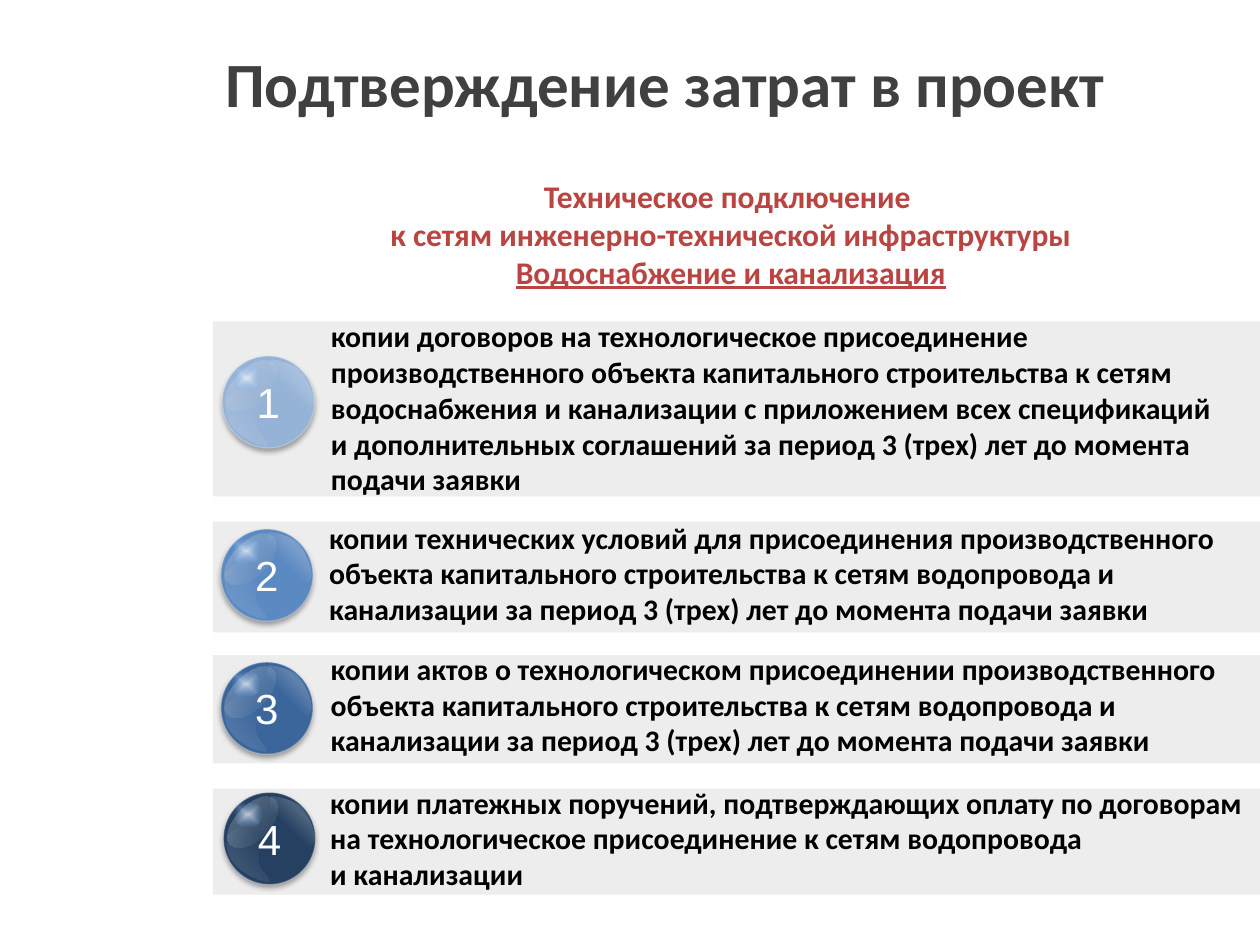
from dataclasses import dataclass
from typing import Any, NamedTuple

from lxml import etree
from pptx import Presentation
from pptx.dml.color import RGBColor
from pptx.enum.shapes import MSO_SHAPE
from pptx.enum.text import MSO_ANCHOR, MSO_AUTO_SIZE, PP_ALIGN
from pptx.oxml.ns import qn
from pptx.util import Inches, Pt

RECTANGLE, OVAL = MSO_SHAPE.RECTANGLE, MSO_SHAPE.OVAL
LEFT, CENTER = PP_ALIGN.LEFT, PP_ALIGN.CENTER
TOP, MIDDLE = MSO_ANCHOR.TOP, MSO_ANCHOR.MIDDLE
GROW = MSO_AUTO_SIZE.SHAPE_TO_FIT_TEXT

WHITE = RGBColor(0xFF, 0xFF, 0xFF)
BLACK = RGBColor(0x00, 0x00, 0x00)
TITLE_GREY = RGBColor(0x40, 0x40, 0x40)
HEADING_RED = RGBColor(0xB9, 0x44, 0x41)
BAR_GREY = RGBColor(0xA6, 0xA6, 0xA6)
GLINT_GREY = RGBColor(0xB6, 0xB6, 0xB6)
GLINT_BLUE = RGBColor(0x67, 0xAB, 0xF5)
BALL_BLUES = (
    RGBColor(0x95, 0xB3, 0xD7),
    RGBColor(0x5B, 0x89, 0xC1),
    RGBColor(0x3B, 0x66, 0x9B),
    RGBColor(0x25, 0x40, 0x61),
)

SLIDE_WIDTH, SLIDE_HEIGHT = Inches(10), Inches(7.5)
COLUMNS, ROWS = 1000, 750
BAR_LEFT, BAR_WIDTH = 169, 831
BALL_SIZE = 73

TITLE_FORMAT = {"size": Pt(36), "name": "Calibri", "bold": True}
HEADING_FORMAT = {"size": Pt(18), "name": "Calibri", "bold": True}
ITEM_FORMAT = {"size": Pt(17), "name": "Calibri", "bold": True}
NUMBER_FORMAT = {"size": Pt(24), "name": "Arial"}


class Box(NamedTuple):
    left: float
    top: float
    width: float
    height: float

    def emu(self) -> tuple[int, int, int, int]:
        return col(self.left), row(self.top), col(self.width), row(self.height)


class Stop(NamedTuple):
    position: int
    color: RGBColor
    opacity: int


class Gradient(NamedTuple):
    stops: tuple[Stop, ...]
    angle: int = 90
    shape: str = ""
    focus: tuple[int, int, int, int] = (50, 50, 50, 50)


@dataclass(frozen=True)
class Glint:
    box: Box
    rotation: int
    gradient: Gradient


@dataclass(frozen=True)
class Reflection:
    start: tuple[int, int]
    curves: tuple[tuple[int, ...], ...]
    gradient: Gradient


@dataclass(frozen=True)
class Requirement:
    bar_top: int
    bar_height: int
    ball: tuple[float, float]
    text_box: Box
    text: str


GLINTS = (
    Glint(Box(-2, 10, 50, 27), 315, Gradient((Stop(0, WHITE, 33), Stop(100, GLINT_GREY, 0)))),
    Glint(Box(8, 7, 23, 21), 0,
          Gradient((Stop(0, WHITE, 65), Stop(100, GLINT_BLUE, 0)), shape="shape")),
    Glint(Box(28, 39, 50, 27), 135, Gradient((Stop(0, WHITE, 33), Stop(20, GLINT_GREY, 0)))),
)
REFLECTIONS = (
    Reflection(
        (39, 3),
        ((35, 3, 38, 9, 36, 12), (35, 14, 27, 15, 31, 20), (33, 26, 56, 34, 58, 41),
         (60, 49, 59, 49, 61, 48), (63, 47, 72, 42, 72, 36), (72, 30, 67, 17, 61, 11),
         (56, 6, 43, 3, 39, 3)),
        Gradient((Stop(50, WHITE, 0), Stop(74, WHITE, 19), Stop(100, WHITE, 0)),
                 shape="circle", focus=(0, 100, 100, 0))),
    Reflection(
        (24, 20),
        ((22, 20, 15, 24, 12, 27), (8, 30, 4, 32, 3, 35), (2, 39, 3, 45, 4, 49),
         (6, 53, 8, 57, 12, 60), (15, 63, 20, 66, 24, 68), (29, 70, 36, 72, 36, 70),
         (37, 68, 29, 61, 28, 56), (27, 51, 29, 47, 28, 41), (28, 36, 24, 28, 24, 25),
         (23, 21, 26, 20, 24, 20)),
        Gradient((Stop(0, WHITE, 0), Stop(28, WHITE, 0), Stop(74, WHITE, 11)), angle=142)),
)
REQUIREMENTS = (
    Requirement(255, 139, (176.4, 282.6), Box(252.8, 247.6, 749, 153),
                "копии договоров на технологическое присоединение производственного объекта "
                "капитального строительства к сетям водоснабжения и канализации с приложением "
                "всех спецификаций \nи дополнительных соглашений за период 3 (трех) лет "
                "до момента подачи заявки"),
    Requirement(414, 88, (175.4, 420), Box(251.4, 407.4, 749, 96),
                "копии технических условий для присоединения производственного объекта "
                "капитального строительства к сетям водопровода и канализации "
                "за период 3 (трех) лет до момента подачи заявки"),
    Requirement(520, 86, (175.4, 525.6), Box(252.6, 511.6, 749, 96),
                "копии актов о технологическом присоединении производственного объекта "
                "капитального строительства к сетям водопровода и канализации "
                "за период 3 (трех) лет до момента подачи заявки"),
    Requirement(626, 84, (177.4, 629), Box(252.2, 617.6, 752, 96),
                "копии платежных поручений, подтверждающих оплату по договорам \n"
                "на технологическое присоединение к сетям водопровода \nи канализации"),
)


def col(columns: float) -> int:
    return round(SLIDE_WIDTH * columns / COLUMNS)


def row(rows: float) -> int:
    return round(SLIDE_HEIGHT * rows / ROWS)


def child(parent: Any, tag: str, **attributes: Any) -> Any:
    return etree.SubElement(parent, qn(tag), {k: str(v) for k, v in attributes.items()})


def set_opacity(fill: Any, percent: int) -> None:
    color = fill._xPr.find(".//" + qn("a:srgbClr"))
    child(color, "a:alpha", val=percent * 1000)


def write(paragraph: Any, text: str, style: dict, color: RGBColor, align: Any) -> None:
    paragraph.text = text
    paragraph.alignment = align
    for run in paragraph.runs:
        for attribute, value in style.items():
            setattr(run.font, attribute, value)
        run.font.color.rgb = color


def fill_gradient(shape: Any, gradient: Gradient) -> None:
    shape.shadow.inherit = False
    shape.line.fill.background()
    shape.fill.background()
    properties = shape._element.spPr
    empty = properties.find(qn("a:noFill"))
    fill = etree.Element(qn("a:gradFill"), rotWithShape="1")
    stops = child(fill, "a:gsLst")
    for stop in gradient.stops:
        mark = child(stops, "a:gs", pos=stop.position * 1000)
        color = child(mark, "a:srgbClr", val=stop.color)
        child(color, "a:alpha", val=stop.opacity * 1000)
    if gradient.shape:
        route = child(fill, "a:path", path=gradient.shape)
        child(route, "a:fillToRect",
              **{side: share * 1000 for side, share in zip("ltrb", gradient.focus)})
    else:
        child(fill, "a:lin", ang=gradient.angle * 60000, scaled=0)
    properties.replace(empty, fill)


def draw_reflection(parts: Any, left: float, top: float, reflection: Reflection) -> None:
    x, y = reflection.start
    builder = parts.build_freeform(col(left + x), row(top + y))
    builder.add_line_segments([(col(left + curve[i]), row(top + curve[i + 1]))
                               for curve in reflection.curves for i in (0, 2, 4)])
    outline = builder.convert_to_shape()
    segments = list(outline._element.spPr.iter(qn("a:lnTo")))
    for first in range(0, len(segments), 3):
        bend = etree.Element(qn("a:cubicBezTo"))
        segments[first].addprevious(bend)
        for segment in segments[first:first + 3]:
            bend.append(segment[0])
            segment.getparent().remove(segment)
    fill_gradient(outline, reflection.gradient)


def draw_bar(slide: Any, item: Requirement) -> None:
    box = Box(BAR_LEFT, item.bar_top, BAR_WIDTH, item.bar_height)
    bar = slide.shapes.add_shape(RECTANGLE, *box.emu())
    bar.shadow.inherit = False
    bar.line.fill.background()
    bar.fill.solid()
    bar.fill.fore_color.rgb = BAR_GREY
    set_opacity(bar.fill, 20)


def draw_ball(slide: Any, item: Requirement, number: int, color: RGBColor) -> None:
    left, top = item.ball
    parts = slide.shapes.add_group_shape().shapes
    ball = parts.add_shape(OVAL, *Box(left, top, BALL_SIZE, BALL_SIZE).emu())
    ball.fill.solid()
    ball.fill.fore_color.rgb = color
    ball.line.color.rgb = WHITE
    ball.line.width = Pt(0.75)
    set_opacity(ball.line.fill, 25)
    ball.shadow.inherit = False
    shadow = child(ball._element.spPr.find(qn("a:effectLst")), "a:outerShdw",
                   blurRad=Pt(3.1), dist=Pt(1.8), dir=90 * 60000, rotWithShape=0)
    child(child(shadow, "a:srgbClr", val=BLACK), "a:alpha", val=35000)
    ball.text_frame.vertical_anchor = MIDDLE
    write(ball.text_frame.paragraphs[0], str(number), NUMBER_FORMAT, WHITE, CENTER)
    for glint in GLINTS:
        x, y, width, height = glint.box
        shine = parts.add_shape(OVAL, *Box(left + x, top + y, width, height).emu())
        shine.rotation = glint.rotation
        fill_gradient(shine, glint.gradient)
    for reflection in REFLECTIONS:
        draw_reflection(parts, left, top, reflection)


def add_text(slide: Any, box: Box) -> Any:
    frame = slide.shapes.add_textbox(*box.emu()).text_frame
    for attribute, value in {"word_wrap": True, "auto_size": GROW, "vertical_anchor": TOP}.items():
        setattr(frame, attribute, value)
    return frame


def main() -> None:
    deck = Presentation()
    deck.slide_width, deck.slide_height = SLIDE_WIDTH, SLIDE_HEIGHT
    slide = deck.slides.add_slide(deck.slide_layouts[5])

    title = slide.shapes.title
    title.left, title.top, title.width, title.height = Box(168.6, 7, 823, 117).emu()
    title.text_frame.vertical_anchor = MIDDLE
    write(title.text_frame.paragraphs[0], "Подтверждение затрат в проект",
          TITLE_FORMAT, TITLE_GREY, LEFT)

    heading = add_text(slide, Box(172.6, 135.6, 815, 131))
    write(heading.paragraphs[0],
          "Техническое подключение \nк сетям инженерно-технической инфраструктуры",
          HEADING_FORMAT, HEADING_RED, CENTER)
    write(heading.add_paragraph(), "Водоснабжение и канализация",
          HEADING_FORMAT | {"underline": True}, HEADING_RED, CENTER)

    for item in reversed(REQUIREMENTS):
        draw_bar(slide, item)
    for number, (item, blue) in enumerate(zip(REQUIREMENTS, BALL_BLUES), start=1):
        draw_ball(slide, item, number, blue)
    for item in REQUIREMENTS:
        write(add_text(slide, item.text_box).paragraphs[0], item.text,
              ITEM_FORMAT, BLACK, LEFT)

    deck.save("out.pptx")


if __name__ == "__main__":
    main()
